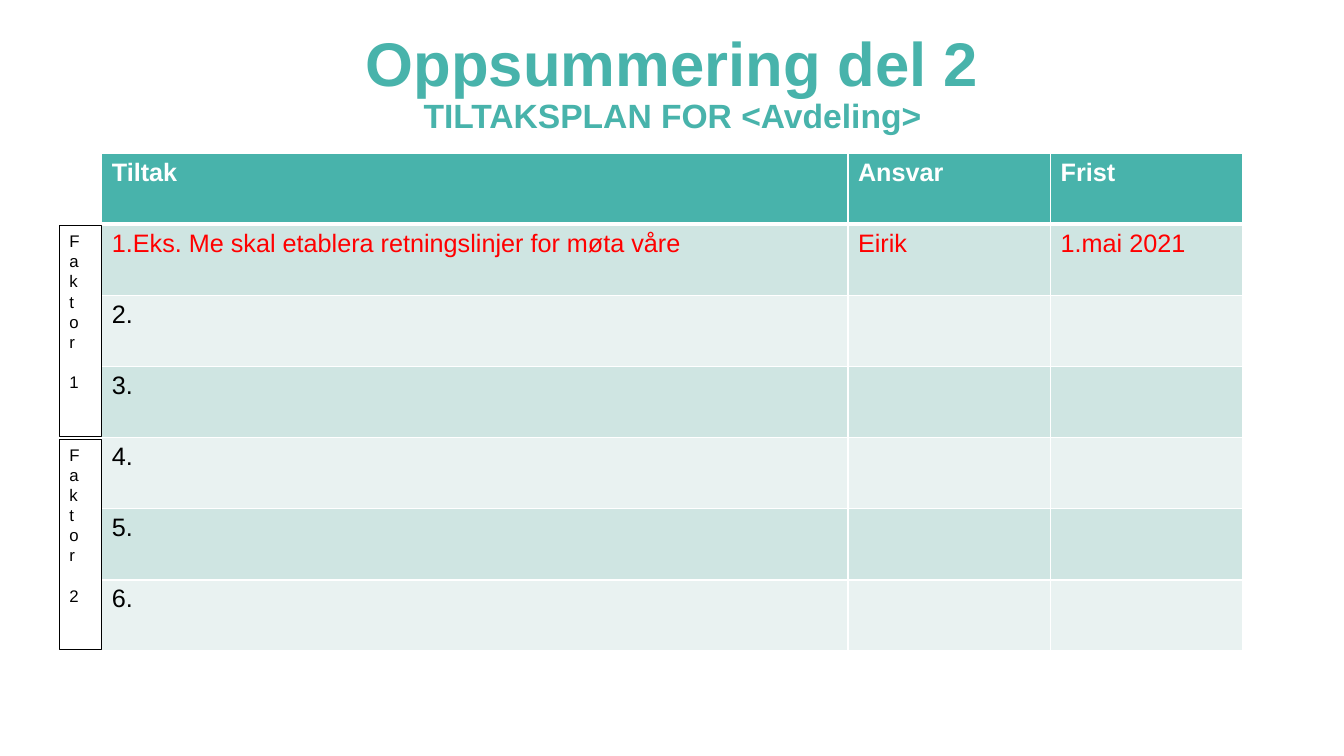
import pptx
import pptx.util
import pptx.dml.color
import pptx.enum.shapes
import pptx.enum.text
import pptx.oxml
import pptx.oxml.ns
from dataclasses import dataclass

TITLE_LINES = ["Oppsummering del 2", "TILTAKSPLAN FOR <Avdeling>"]
PLAN_ROWS = [
    ("Tiltak", "Ansvar", "Frist"),
    ("1.Eks. Me skal etablera retningslinjer for møta våre", "Eirik", "1.mai 2021"),
    ("2.", "", ""),
    ("3.", "", ""),
    ("4.", "", ""),
    ("5.", "", ""),
    ("6.", "", ""),
]
FACTORS = ["Faktor 1", "Faktor 2"]


@dataclass(frozen=True)
class Theme:
    font: str = "Arial"
    teal: str = "48B3AB"
    bands: tuple = ("CFE5E2", "E9F2F1")
    white: str = "FFFFFF"
    black: str = "000000"
    example: str = "FF0000"
    title_sizes: tuple = (44, 24)
    table_size: int = 18
    factor_size: int = 12


THEME = Theme()
SLIDE_WIDTH, SLIDE_HEIGHT = 13.33, 7.5
TABLE_LEFT, TABLE_TOP = 1.01, 1.52
COLUMN_WIDTHS = (7.4, 2.01, 1.9)
ROW_HEIGHT = 4.94 / len(PLAN_ROWS)
FACTOR_WIDTH = 0.42
FACTOR_ROWS = 3
FACTOR_GAP = 0.03


def inches(*lengths):
    return [pptx.util.Inches(length) for length in lengths]


def color(value):
    return pptx.dml.color.RGBColor.from_string(value)


def style(paragraph, size, value, bold=False):
    paragraph.font.size = pptx.util.Pt(size)
    for run in paragraph.runs:
        run.font.name = THEME.font
        run.font.size = pptx.util.Pt(size)
        run.font.bold = bold
        run.font.color.rgb = color(value)


def set_borders(cell, widths):
    properties = cell._tc.get_or_add_tcPr()
    for side, points in zip("LRTB", widths):
        properties.append(pptx.oxml.parse_xml(
            f'<a:ln{side} {pptx.oxml.ns.nsdecls("a")} w="{pptx.util.Pt(points)}">'
            f'<a:solidFill><a:srgbClr val="{THEME.white}"/></a:solidFill></a:ln{side}>'
        ))


def add_title(slide):
    box = slide.shapes.add_textbox(*inches(0.55, 0.15, 12.24, 1.2))
    frame = box.text_frame
    frame.word_wrap = True
    frame.vertical_anchor = pptx.enum.text.MSO_ANCHOR.BOTTOM
    frame.margin_left = frame.margin_right = frame.margin_top = frame.margin_bottom = 0
    frame.text = "\n".join(TITLE_LINES)
    for paragraph, size in zip(frame.paragraphs, THEME.title_sizes):
        paragraph.alignment = pptx.enum.text.PP_ALIGN.CENTER
        paragraph.line_spacing = 0.9
        style(paragraph, size, THEME.teal, bold=True)


def add_plan(slide):
    table = slide.shapes.add_table(
        len(PLAN_ROWS), len(COLUMN_WIDTHS),
        *inches(TABLE_LEFT, TABLE_TOP, sum(COLUMN_WIDTHS), ROW_HEIGHT * len(PLAN_ROWS)),
    ).table
    for column, width in zip(table.columns, COLUMN_WIDTHS):
        column.width = pptx.util.Inches(width)
    text_colors = {0: THEME.white, 1: THEME.example}
    for row_index, texts in enumerate(PLAN_ROWS):
        table.rows[row_index].height = pptx.util.Inches(ROW_HEIGHT)
        header = row_index == 0
        fill = THEME.teal if header else THEME.bands[(row_index - 1) % 2]
        top = 3 if row_index == 1 else 1
        bottom = 3 if header else 1
        for column_index, text in enumerate(texts):
            cell = table.cell(row_index, column_index)
            set_borders(cell, (1, 1, top, bottom))
            cell.fill.solid()
            cell.fill.fore_color.rgb = color(fill)
            cell.text_frame.text = text
            style(cell.text_frame.paragraphs[0], THEME.table_size,
                  text_colors.get(row_index, THEME.black), bold=header)


def add_factors(slide):
    block_height = FACTOR_ROWS * ROW_HEIGHT
    for index, label in enumerate(FACTORS):
        top = TABLE_TOP + ROW_HEIGHT + index * block_height
        shape = slide.shapes.add_shape(
            pptx.enum.shapes.MSO_SHAPE.RECTANGLE,
            *inches(TABLE_LEFT - FACTOR_WIDTH, top + FACTOR_GAP / 2,
                    FACTOR_WIDTH, block_height - FACTOR_GAP),
        )
        shape.shadow.inherit = False
        shape.fill.background()
        shape.line.color.rgb = color(THEME.black)
        shape.line.width = pptx.util.Pt(0.75)
        frame = shape.text_frame
        frame.text = label
        frame.word_wrap = True
        frame.vertical_anchor = pptx.enum.text.MSO_ANCHOR.TOP
        frame._txBody.bodyPr.set("vert", "wordArtVert")
        paragraph = frame.paragraphs[0]
        paragraph.alignment = pptx.enum.text.PP_ALIGN.LEFT
        style(paragraph, THEME.factor_size, THEME.black)


def main():
    presentation = pptx.Presentation()
    presentation.slide_width, presentation.slide_height = inches(SLIDE_WIDTH, SLIDE_HEIGHT)
    slide = presentation.slides.add_slide(presentation.slide_layouts[6])
    add_title(slide)
    add_plan(slide)
    add_factors(slide)
    presentation.save("out.pptx")


if __name__ == "__main__":
    main()
